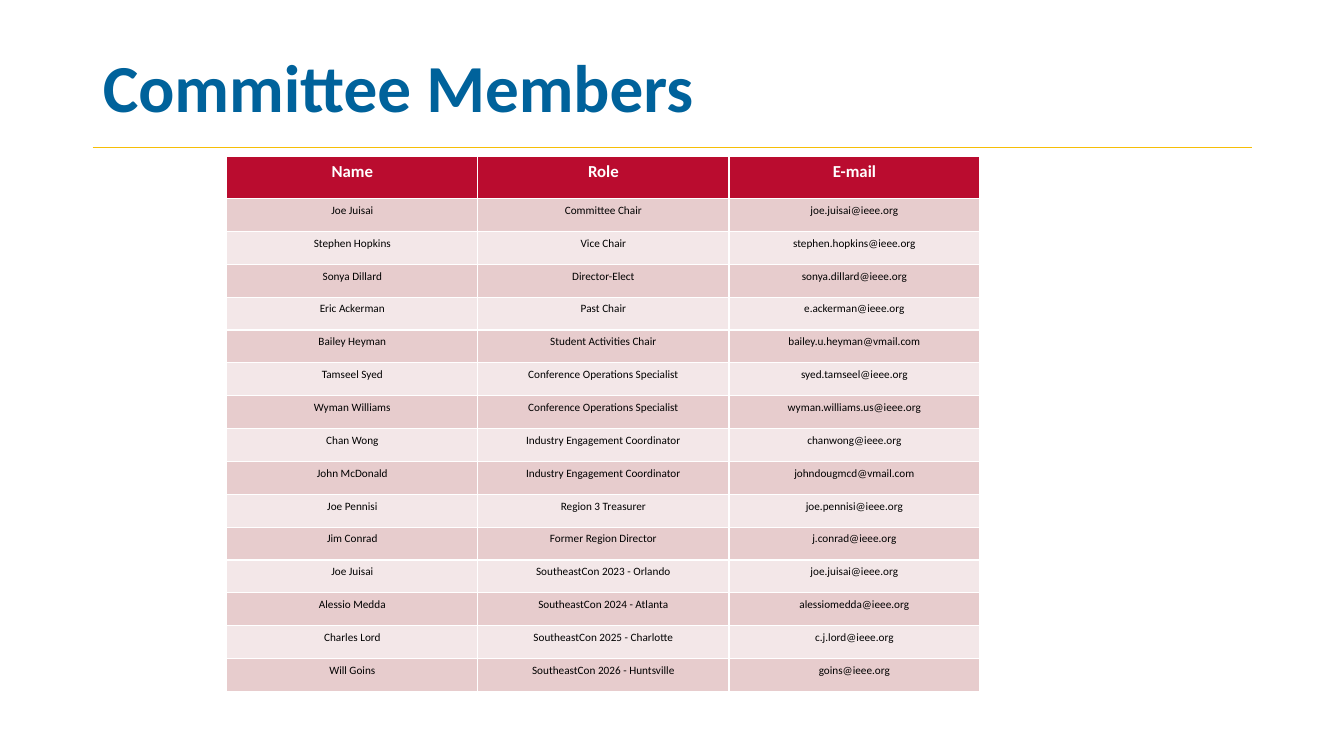
import pptx
import pptx.dml.color
import pptx.enum.shapes
import pptx.enum.text
import pptx.oxml.ns
import pptx.util
from lxml import etree

HEADING = "Committee Members"
COLUMNS = ("Name", "Role", "E-mail")
MEMBERS = [
    ("Joe Juisai", "Committee Chair", "joe.juisai@ieee.org"),
    ("Stephen Hopkins", "Vice Chair", "stephen.hopkins@ieee.org"),
    ("Sonya Dillard", "Director-Elect", "sonya.dillard@ieee.org"),
    ("Eric Ackerman", "Past Chair", "e.ackerman@ieee.org"),
    ("Bailey Heyman", "Student Activities Chair", "bailey.u.heyman@vmail.com"),
    ("Tamseel Syed", "Conference Operations Specialist", "syed.tamseel@ieee.org"),
    ("Wyman Williams", "Conference Operations Specialist", "wyman.williams.us@ieee.org"),
    ("Chan Wong", "Industry Engagement Coordinator", "chanwong@ieee.org"),
    ("John McDonald", "Industry Engagement Coordinator", "johndougmcd@vmail.com"),
    ("Joe Pennisi", "Region 3 Treasurer", "joe.pennisi@ieee.org"),
    ("Jim Conrad", "Former Region Director", "j.conrad@ieee.org"),
    ("Joe Juisai", "SoutheastCon 2023 - Orlando", "joe.juisai@ieee.org"),
    ("Alessio Medda", "SoutheastCon 2024 - Atlanta", "alessiomedda@ieee.org"),
    ("Charles Lord", "SoutheastCon 2025 - Charlotte", "c.j.lord@ieee.org"),
    ("Will Goins", "SoutheastCon 2026 - Huntsville", "goins@ieee.org"),
]

Inches = pptx.util.Inches
Pt = pptx.util.Pt
ALIGN = pptx.enum.text.PP_ALIGN


class Theme:
    font = "Calibri"
    blue = "00629B"
    gold = "F6BE07"
    red = "BA0C2F"
    bands = ("E7CCCD", "F3E7E8")
    white = "FFFFFF"
    black = "000000"
    heading = {"size": Pt(48), "bold": True, "name": font}
    header = {"size": Pt(12), "bold": True, "name": font}
    member = {"size": Pt(8), "bold": False, "name": font}


def rgb(value):
    return pptx.dml.color.RGBColor.from_string(value)


def apply(target, formats):
    for attribute, value in formats.items():
        setattr(target, attribute, value)


def write(frame, text, font, color, align):
    paragraph = frame.paragraphs[0]
    paragraph.alignment = align
    run = paragraph.add_run()
    run.text = text
    apply(run.font, font)
    run.font.color.rgb = rgb(color)
    return paragraph


def add_heading(slide):
    heading = slide.shapes.title
    apply(heading, {"left": Inches(0.92), "top": Inches(0.4),
                    "width": Inches(10.26), "height": Inches(1)})
    apply(heading.text_frame, {
        "word_wrap": True,
        "auto_size": pptx.enum.text.MSO_AUTO_SIZE.NONE,
        "vertical_anchor": pptx.enum.text.MSO_ANCHOR.MIDDLE,
    })
    line = write(heading.text_frame, HEADING, Theme.heading, Theme.blue, ALIGN.LEFT)
    line.line_spacing = 0.9


def add_divider(slide):
    height = Inches(1.46)
    divider = slide.shapes.add_connector(
        pptx.enum.shapes.MSO_CONNECTOR.STRAIGHT,
        Inches(0.92), height, Inches(12.42), height)
    divider.line.color.rgb = rgb(Theme.gold)
    divider.line.width = Pt(0.5)
    properties = divider.element.find(pptx.oxml.ns.qn("p:spPr"))
    etree.SubElement(properties, pptx.oxml.ns.qn("a:effectLst"))


def add_roster(slide):
    width, height, header_height = Inches(7.47), Inches(5.31), Inches(0.42)
    roster = slide.shapes.add_table(
        len(MEMBERS) + 1, len(COLUMNS), Inches(2.25), Inches(1.55), width, height).table
    for column in roster.columns:
        column.width = width // len(COLUMNS)
    for index, entries in enumerate([COLUMNS, *MEMBERS]):
        if index == 0:
            row_height, fill = header_height, Theme.red
            font, color = Theme.header, Theme.white
        else:
            row_height = (height - header_height) // len(MEMBERS)
            fill = Theme.bands[(index - 1) % 2]
            font, color = Theme.member, Theme.black
        roster.rows[index].height = row_height
        for cell, entry in zip(roster.rows[index].cells, entries):
            cell.fill.solid()
            cell.fill.fore_color.rgb = rgb(fill)
            write(cell.text_frame, entry, font, color, ALIGN.CENTER)


def main():
    deck = pptx.Presentation()
    apply(deck, {"slide_width": Inches(13.33), "slide_height": Inches(7.5)})
    slide = deck.slides.add_slide(deck.slide_layouts[5])
    add_divider(slide)
    add_heading(slide)
    add_roster(slide)
    deck.save("out.pptx")


if __name__ == "__main__":
    main()
